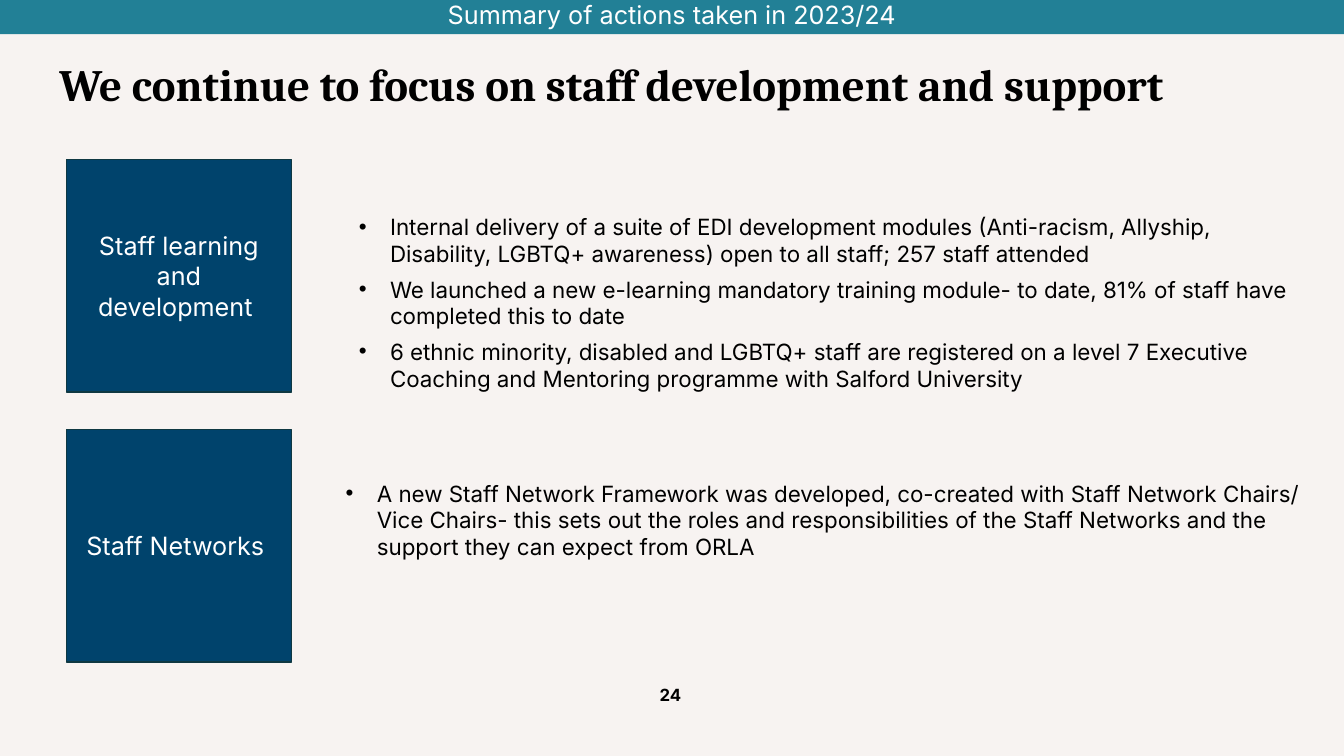
import pptx
import pptx.util
import pptx.dml.color
import pptx.enum.shapes
import pptx.enum.text
import lxml.etree

Inches, Pt = pptx.util.Inches, pptx.util.Pt
ALIGN, ANCHOR = pptx.enum.text.PP_ALIGN, pptx.enum.text.MSO_ANCHOR
RECT = pptx.enum.shapes.MSO_SHAPE.RECTANGLE

# Content
BANNER = "Summary of actions taken in 2023/24"
TITLE = "We continue to focus on staff development and support"
PAGE = "24"
TOPICS = [
    {
        "label": "Staff learning and development ",
        "box": (3.46, 2.07, 9.51, 1.93),
        "bullets": [
            "Internal delivery of a suite of EDI development modules (Anti-racism, Allyship, "
            "Disability, LGBTQ+ awareness) open to all staff; 257 staff attended",
            "We launched a new e-learning mandatory training module- to date, 81% of staff "
            "have completed this to date",
            "6 ethnic minority, disabled and LGBTQ+ staff are registered on a level 7 Executive "
            "Coaching and Mentoring programme with Salford University",
        ],
    },
    {
        "label": "Staff Networks ",
        "box": (3.33, 4.71, 9.76, 2.05),
        "bullets": [
            "A new Staff Network Framework was developed, co-created with Staff Network Chairs/ "
            "Vice Chairs- this sets out the roles and responsibilities of the Staff Networks "
            "and the support they can expect from ORLA",
        ],
    },
]
COLORS = {"page": "F7F3F1", "navy": "00436C", "edge": "0F3842",
          "teal": "228096", "black": "000000", "white": "FFFFFF"}
TILE_LEFT, TILE_TOP, TILE_W, TILE_H, TILE_STEP = 0.66, 1.58, 2.23, 2.31, 2.68
INDENT = Inches(0.31)

prs = pptx.Presentation()
prs.slide_width, prs.slide_height = Inches(13.33), Inches(7.5)
s = prs.slides.add_slide(prs.slide_layouts[6])


def rgb(name):
    return pptx.dml.color.RGBColor.from_string(COLORS[name])


def add_bullet(p):
    pPr = p._p.get_or_add_pPr()
    pPr.set("marL", str(INDENT))
    pPr.set("indent", str(-INDENT))
    ns = pptx.oxml.ns.qn
    lxml.etree.SubElement(pPr, ns("a:buFont")).set("typeface", "Arial")
    lxml.etree.SubElement(pPr, ns("a:buChar")).set("char", "•")


def add_text(lines, box, size=18, font="Inter", color="black", bold=False, align=ALIGN.LEFT,
             anchor=ANCHOR.TOP, bullets=False, spacing=None, fill=None, line=None):
    """Add a text box, or a filled rectangle when fill is given."""
    box = [Inches(v) for v in box]
    if fill:
        sp = s.shapes.add_shape(RECT, *box)
        sp.shadow.inherit = False
        sp.fill.solid()
        sp.fill.fore_color.rgb = rgb(fill)
        if line:
            sp.line.color.rgb = rgb(line)
            sp.line.width = Pt(1)
        else:
            sp.line.fill.background()
    else:
        sp = s.shapes.add_textbox(*box)
    tf = sp.text_frame
    tf.word_wrap = True
    tf.vertical_anchor = anchor
    for i, text in enumerate(lines):
        p = tf.add_paragraph() if i else tf.paragraphs[0]
        p.alignment = align
        if spacing:
            p.line_spacing = spacing
        if i:
            p.space_before = Pt(6)
        if bullets:
            add_bullet(p)
        r = p.add_run()
        r.text = text
        r.font.name, r.font.size, r.font.bold = font, Pt(size), bold
        r.font.color.rgb = rgb(color)


# Background
s.background.fill.solid()
s.background.fill.fore_color.rgb = rgb("page")

# Page number and title
add_text([PAGE], (5.15, 6.74, 3, 0.4), size=12, bold=True, align=ALIGN.CENTER)
add_text([TITLE], (0.49, 0.57, 12.11, 1.27), size=32, font="Cambria", bold=True, spacing=0.9)

# Topic tiles with their bullets
for row, topic in enumerate(TOPICS):
    add_text(topic["bullets"], topic["box"], size=16, bullets=True)
    add_text([topic["label"]], (TILE_LEFT, TILE_TOP + row * TILE_STEP, TILE_W, TILE_H),
             color="white", align=ALIGN.CENTER, anchor=ANCHOR.MIDDLE, fill="navy", line="edge")

# Top banner
add_text([BANNER], (0, -0.06, 13.33, 0.4), color="white", align=ALIGN.CENTER,
         anchor=ANCHOR.MIDDLE, fill="teal")

prs.save("out.pptx")
